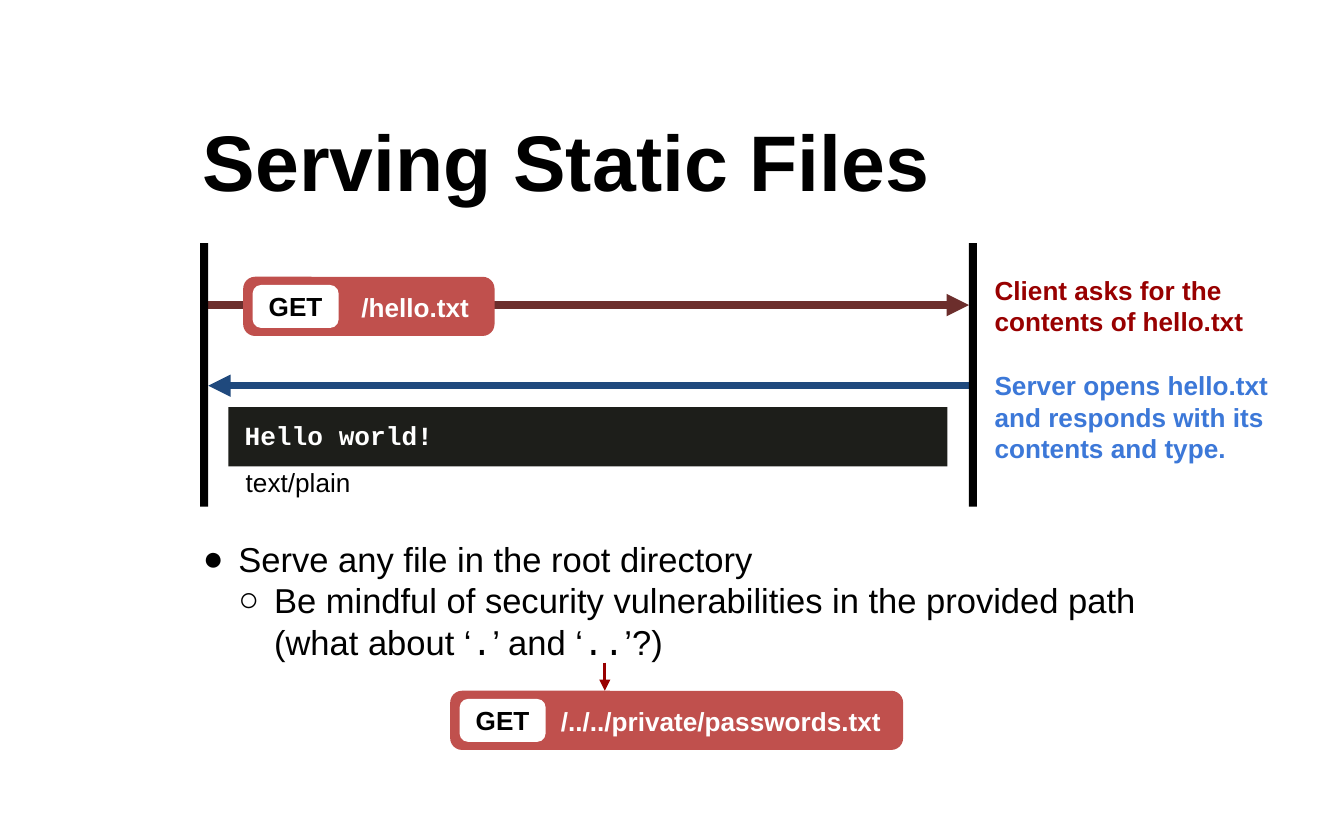
import pptx
import pptx.util
import pptx.dml.color
import pptx.enum.shapes
import pptx.enum.text
import pptx.oxml
import pptx.oxml.ns

PX = 9144  # EMU per px, 100 px to the inch
COLORS = {
    "black": "000000", "white": "FFFFFF", "request": "C0504D",
    "request_arrow": "6C2E2C", "response_arrow": "1F497D",
    "client_note": "980000", "server_note": "3C78D8", "terminal": "1D1E1A",
}
SHAPE = pptx.enum.shapes.MSO_SHAPE
ALIGN = pptx.enum.text.PP_ALIGN
ANCHOR = pptx.enum.text.MSO_ANCHOR


def add_box(place, fill=None, kind=SHAPE.RECTANGLE, corner=None):
    """Add a shape without line or shadow at (left, top, width, height)."""
    box = page.shapes.add_shape(kind, *[n * PX for n in place])
    box.shadow.inherit = False
    box.line.fill.background()
    if fill:
        box.fill.solid()
        box.fill.fore_color.rgb = pptx.dml.color.RGBColor.from_string(COLORS[fill])
    else:
        box.fill.background()
    if corner:
        box.adjustments[0] = corner
    return box


def write(box, spans, size, color, bold=False, inset=3,
          anchor=ANCHOR.TOP, align=ALIGN.LEFT, para=None):
    """Fill a paragraph with (text, font) spans and set up its frame."""
    frame = box.text_frame
    frame.word_wrap = True
    frame.auto_size = pptx.enum.text.MSO_AUTO_SIZE.NONE
    frame.vertical_anchor = anchor
    frame.margin_left = frame.margin_right = inset * PX
    frame.margin_top = frame.margin_bottom = inset * PX
    para = para or frame.paragraphs[0]
    para.alignment = align
    for text, font in spans:
        span = para.add_run()
        span.text = text
        span.font.name = font
        span.font.size = pptx.util.Pt(size)
        span.font.bold = bold
        span.font.color.rgb = pptx.dml.color.RGBColor.from_string(COLORS[color])
    return para


deck = pptx.Presentation()
deck.slide_width, deck.slide_height = 1000 * PX, 625 * PX
page = deck.slides.add_slide(deck.slide_layouts[5])

# Title
title = page.shapes.title
title.left, title.top, title.width, title.height = [n * PX for n in (148, 57, 704, 124)]
write(title, [("Serving Static Files", "Arial")], 42.2, "black", True, anchor=ANCHOR.MIDDLE)

# Bulleted text
bullets = [
    ("●", [("Serve any file in the root directory", "Arial")]),
    ("○", [("Be mindful of security vulnerabilities in the provided\u00a0path (what about ‘", "Arial"),
           (".", "Courier New"), ("’ and ‘", "Arial"), ("..", "Courier New"), ("’?)", "Arial")]),
]
body = page.shapes.add_textbox(*[n * PX for n in (148, 397, 704, 147)])
for level, (mark, spans) in enumerate(bullets):
    para = body.text_frame.add_paragraph() if level else body.text_frame.paragraphs[0]
    write(body, spans, 18.5, "black", para=para)
    para.level = level
    props = para._p.get_or_add_pPr()
    props.set("marL", str(round(26.5 * (level + 1) * PX)))
    props.set("indent", str(round(-26.5 * PX)))
    color = pptx.oxml.ns.qn("a:srgbClr")
    bullet_color = props.makeelement(pptx.oxml.ns.qn("a:buClr"), {})
    bullet_color.append(props.makeelement(color, {"val": COLORS["black"]}))
    props.append(bullet_color)
    props.append(props.makeelement(pptx.oxml.ns.qn("a:buFont"), {"typeface": "Arial"}))
    props.append(props.makeelement(pptx.oxml.ns.qn("a:buChar"), {"char": mark}))

# Arrows: request, response, and pointer to the unsafe path
arrows = [
    ((151, 227, 721, 227), "request_arrow", 4),
    ((722, 287, 155, 287), "response_arrow", 4),
    ((450, 493, 450, 514), "client_note", 1.5),
]
for ends, color, width in arrows:
    arrow = page.shapes.add_connector(
        pptx.enum.shapes.MSO_CONNECTOR.STRAIGHT, *[n * PX for n in ends])
    arrow.line.color.rgb = pptx.dml.color.RGBColor.from_string(COLORS[color])
    arrow.line.width = pptx.util.Pt(width)
    line = arrow.line._get_or_add_ln()
    line.append(line.makeelement(pptx.oxml.ns.qn("a:tailEnd"), {"type": "triangle"}))
    outline = arrow._element.spPr
    outline.append(outline.makeelement(pptx.oxml.ns.qn("a:effectLst"), {}))

# GET requests: pill, method badge and path
requests = [
    (181, 206, 187, 252, 114, "/hello.txt"),
    (335, 514, 337, 409, 255, "/../../private/passwords.txt"),
]
for left, top, width, label_left, label_width, address in requests:
    add_box((left, top, width, 44), "request", SHAPE.ROUNDED_RECTANGLE, 0.2)
    badge = add_box((left + 7, top + 6, 64, 32), "white", SHAPE.ROUNDED_RECTANGLE, 0.2)
    label = add_box((label_left, top - 7, label_width, 59))
    for box, text, color in [(badge, "GET", "black"), (label, address, "white")]:
        write(box, [(text, "Arial")], 14, color, True,
              anchor=ANCHOR.MIDDLE, align=ALIGN.CENTER)

# Response content
terminal = add_box((170, 303, 535, 44), "terminal")
para = write(terminal, [("Hello world!", "Courier New")], 14, "white", True, inset=12)
para.line_spacing = 0.9

# Side notes and content type
notes = [
    ((735, 199, 221, 54), "Client asks for the contents of hello.txt", "client_note", True, 5),
    ((735, 270, 221, 69), "Server opens hello.txt and responds with its contents and type.",
     "server_note", True, 5),
    ((173, 337, 191, 44), "text/plain", "black", False, 10),
]
for place, text, color, bold, inset in notes:
    note = page.shapes.add_textbox(*[n * PX for n in place])
    write(note, [(text, "Arial")], 14, color, bold, inset)

# Client and server lifelines
for left in (149, 721):
    add_box((left, 181, 6, 196), "black")

deck.save("out.pptx")
